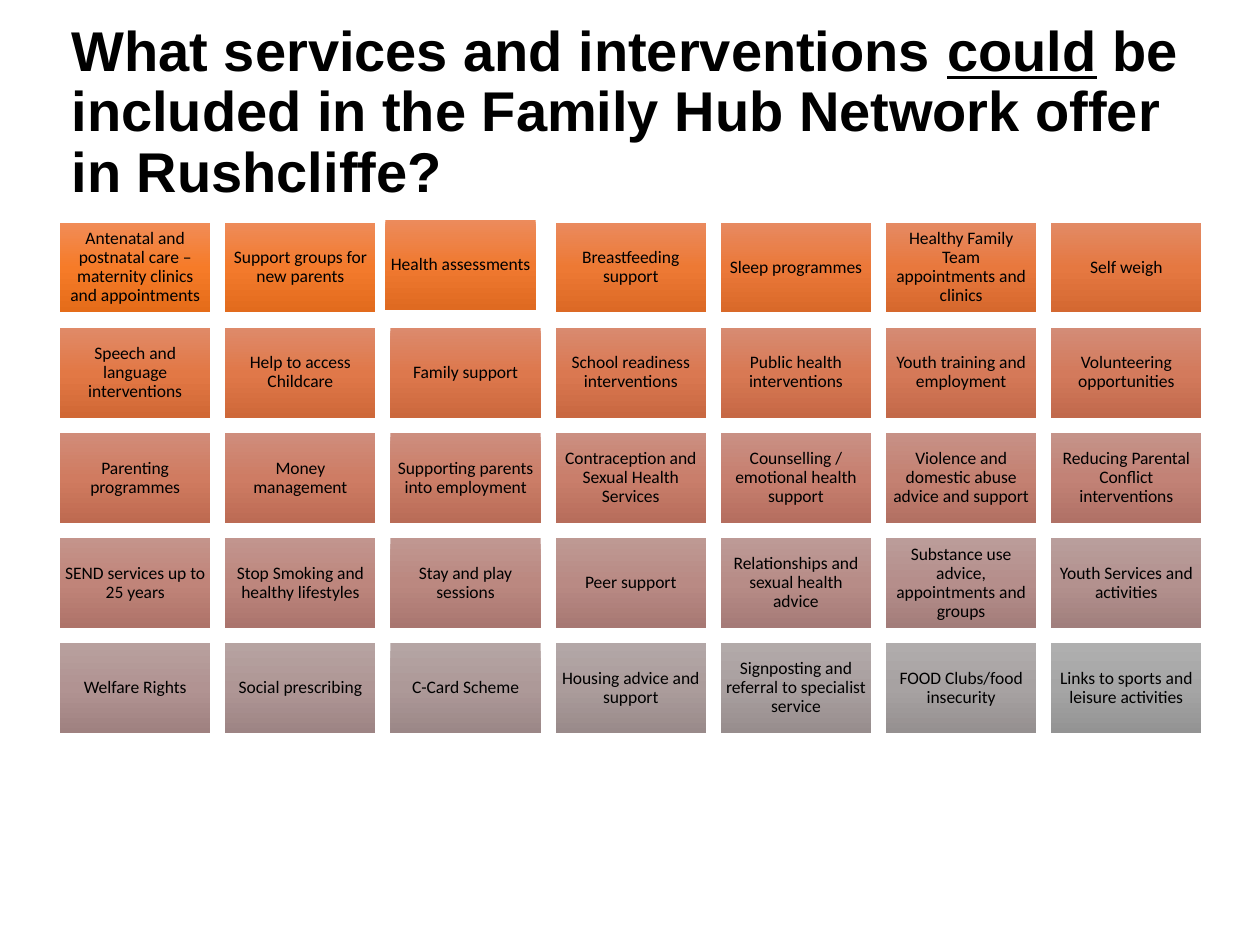
"""Build a slide with a grid of services for the Family Hub Network."""
from copy import deepcopy

from pptx import Presentation
from pptx.dml.color import RGBColor
from pptx.enum.shapes import MSO_SHAPE
from pptx.enum.text import MSO_ANCHOR, PP_ALIGN
from pptx.oxml.ns import qn
from pptx.util import Cm, Pt

RECT = MSO_SHAPE.RECTANGLE
MIDDLE = MSO_ANCHOR.MIDDLE
LEFT, CENTER = PP_ALIGN.LEFT, PP_ALIGN.CENTER

TITLE = [
    ("What services and interventions ", False),
    ("could", True),
    (" be included in the Family Hub Network offer in Rushcliffe?", False),
]
ROWS = [
    ["Antenatal and postnatal care – maternity clinics and appointments",
     "Support groups for new parents", "Health assessments",
     "Breastfeeding support", "Sleep programmes",
     "Healthy Family Team appointments and clinics", "Self weigh"],
    ["Speech and language interventions", "Help to access Childcare",
     "Family support", "School readiness interventions",
     "Public health interventions", "Youth training and employment",
     "Volunteering opportunities"],
    ["Parenting programmes", "Money management",
     "Supporting parents into employment",
     "Contraception and Sexual Health Services",
     "Counselling / emotional health support",
     "Violence and domestic abuse advice and support",
     "Reducing Parental Conflict interventions"],
    ["SEND services up to 25 years", "Stop Smoking and healthy lifestyles",
     "Stay and play sessions", "Peer support",
     "Relationships and sexual health advice",
     "Substance use advice, appointments and groups",
     "Youth Services and activities"],
    ["Welfare Rights", "Social prescribing", "C-Card Scheme",
     "Housing advice and support",
     "Signposting and referral to specialist service",
     "FOOD Clubs/food insecurity", "Links to sports and leisure activities"],
]
COLORS = {
    "text": "000000",
    "first": ["F18C57", "F67B28", "E56C19"],
    "mid": ["CB8F81", "C97E6B", "B76D5B"],
    "last": ["AFAFAF", "A5A5A5", "939393"],
}
GRID = {"left": 1.21, "top": 4.49, "width": 3.03, "height": 1.81,
        "across": 3.33, "down": 2.12}
NUDGE = {(0, 2): (-0.1, -0.05)}
INK = RGBColor.from_string(COLORS["text"])
HEAD_FONT = {"name": "Arial", "size": Pt(32), "bold": True}
CARD_FONT = {"name": "Calibri", "size": Pt(10), "bold": False}


def apply(target, values):
    """Set each named attribute on the target."""
    for name, value in values.items():
        setattr(target, name, value)


def blend(part, first, mid, last):
    """Return the colour on the curve through three colours."""
    share = (2 * (part - 0.5) * (part - 1), 4 * part * (1 - part),
             2 * part * (part - 0.5))
    bands = zip(*(RGBColor.from_string(c) for c in (first, mid, last)))
    return RGBColor(*(round(sum(s * v for s, v in zip(share, band)))
                      for band in bands))


def shade(card, part):
    """Fill a card with its three-stop gradient from top to bottom."""
    card.fill.gradient()
    card.fill.gradient_angle = 270
    stops = card._element.spPr.find(qn("a:gradFill")).find(qn("a:gsLst"))
    stops.append(deepcopy(stops[0]))
    trios = zip(COLORS["first"], COLORS["mid"], COLORS["last"])
    for i, (stop, trio) in enumerate(zip(card.fill.gradient_stops, trios)):
        stop.position = i / 2
        stop.color.rgb = blend(part, *trio)


def add_title(slide):
    """Place and format the title."""
    title = slide.shapes.title
    apply(title, {"left": Cm(1.19), "top": Cm(0.46),
                  "width": Cm(23.04), "height": Cm(3.66)})
    apply(title.text_frame, {"word_wrap": True, "vertical_anchor": MIDDLE})
    para = title.text_frame.paragraphs[0]
    apply(para, {"alignment": LEFT, "line_spacing": 0.9})
    for text, under in TITLE:
        run = para.add_run()
        run.text = text
        apply(run.font, {**HEAD_FONT, "underline": under})
        run.font.color.rgb = INK


def add_card(slide, row, col, text, part):
    """Add one service card at its place in the grid."""
    dx, dy = NUDGE.get((row, col), (0, 0))
    card = slide.shapes.add_shape(
        RECT, Cm(GRID["left"] + col * GRID["across"] + dx),
        Cm(GRID["top"] + row * GRID["down"] + dy),
        Cm(GRID["width"]), Cm(GRID["height"]))
    card.shadow.inherit = False
    card.line.fill.background()
    shade(card, part)
    frame = card.text_frame
    apply(frame, {"word_wrap": True, "vertical_anchor": MIDDLE})
    apply(frame, {f"margin_{side}": Cm(0.1)
                  for side in ("left", "top", "right", "bottom")})
    para = frame.paragraphs[0]
    apply(para, {"text": text, "alignment": CENTER, "line_spacing": 0.9})
    apply(para.runs[0].font, CARD_FONT)
    para.runs[0].font.color.rgb = INK


def main():
    """Build and save the slide."""
    deck = Presentation()
    apply(deck, {"slide_width": Cm(25.4), "slide_height": Cm(19.05)})
    slide = deck.slides.add_slide(deck.slide_layouts[5])
    add_title(slide)
    wide = len(ROWS[0])
    end = len(ROWS) * wide - 1
    for row, names in enumerate(ROWS):
        for col, text in enumerate(names):
            add_card(slide, row, col, text, (row * wide + col) / end)
    deck.save("out.pptx")


if __name__ == "__main__":
    main()
